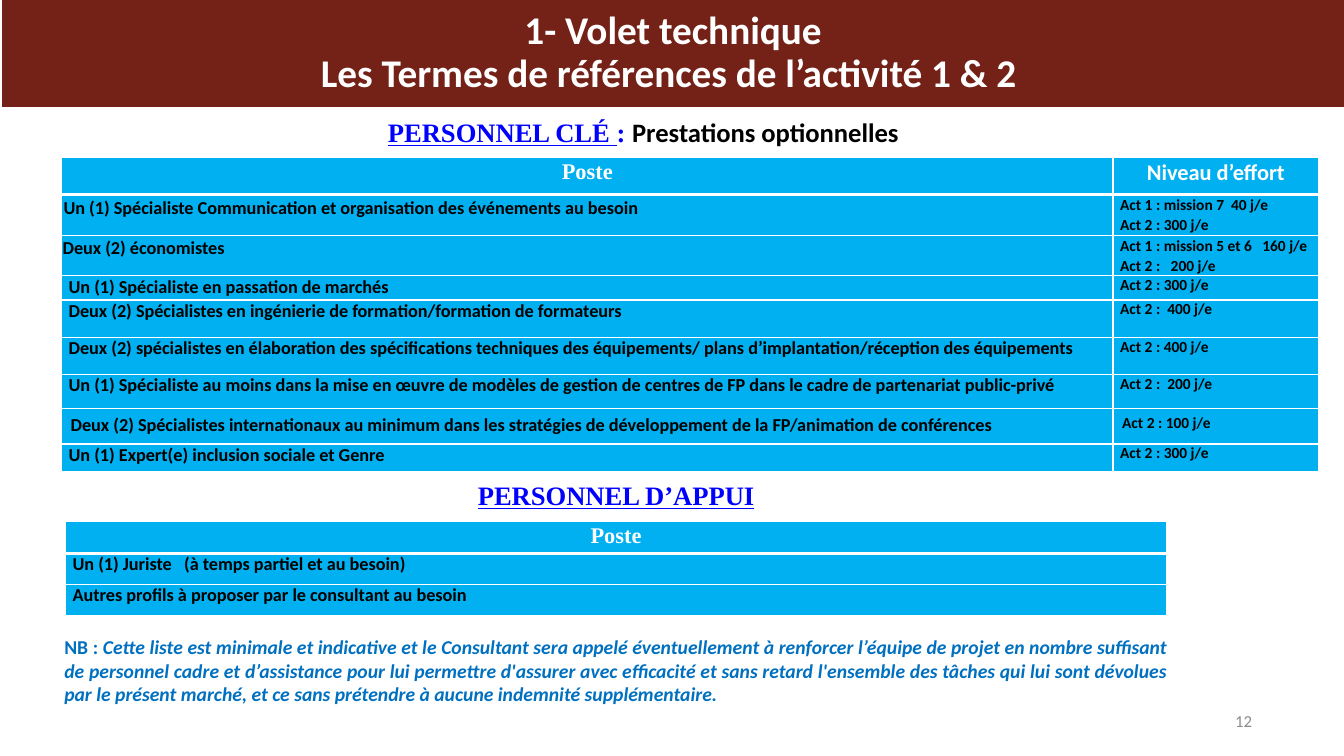
from lxml import etree
from pptx import Presentation
from pptx import util as u
from pptx.dml.color import RGBColor
from pptx.enum import text
from pptx.oxml import ns

rgb = RGBColor.from_string
SANS, SERIF = "Calibri", "Times New Roman"
SKY, WHITE, BLACK, BLUE = "00B0F0", "FFFFFF", "000000", "0000FF"
LEFT, CENTER = text.PP_ALIGN.LEFT, text.PP_ALIGN.CENTER
RIGHT, JUSTIFY = text.PP_ALIGN.RIGHT, text.PP_ALIGN.JUSTIFY

deck = Presentation()
deck.slide_width, deck.slide_height = u.Inches(13.33), u.Inches(7.5)
slide = deck.slides.add_slide(deck.slide_layouts[5])
# The slide is a grid of 100 columns by 100 rows
COL, ROW = deck.slide_width / 100, deck.slide_height / 100


def write(paragraph, runs, size, face, color, bold=True, align=LEFT, spacing=1.0):
    """Add the runs to the paragraph and give them one shared format."""
    paragraph.alignment, paragraph.line_spacing = align, spacing
    for words in runs:
        paragraph.add_run().text = words
    for font in (paragraph.font, *(run.font for run in paragraph.runs)):
        font.size, font.name, font.bold = u.Pt(size), face, bold
        font.color.rgb = rgb(color)


def add_staff_table(left, top, widths, rows):
    """Rows are (height, spacing, cells); cells are (lines, size, face, color, align, insets)."""
    height = sum(row[0] for row in rows)
    table = slide.shapes.add_table(
        len(rows), len(widths), int(left * COL), int(top * ROW),
        int(sum(widths) * COL), int(height * ROW)).table
    for column, width in zip(table.columns, widths):
        column.width = int(width * COL)
    for r, (height, spacing, cells) in enumerate(rows):
        table.rows[r].height = int(height * ROW)
        for c, (lines, size, face, color, align, (side, edge)) in enumerate(cells):
            cell = table.cell(r, c)
            cell.margin_left = cell.margin_right = u.Inches(side)
            cell.margin_top = cell.margin_bottom = u.Inches(edge)
            for i, line in enumerate(lines):
                frame = cell.text_frame
                paragraph = frame.add_paragraph() if i else frame.paragraphs[0]
                write(paragraph, [line], size, face, color, True, align, spacing)
            borders = cell._tc.get_or_add_tcPr()
            for edge_name in ("lnL", "lnR", "lnT", "lnB"):
                thick = (r, edge_name) in ((0, "lnB"), (1, "lnT"))
                line = etree.SubElement(borders, ns.qn("a:" + edge_name),
                                        w=str(u.Pt(3 if thick else 1)))
                paint = etree.SubElement(line, ns.qn("a:solidFill"))
                etree.SubElement(paint, ns.qn("a:srgbClr"), val=WHITE)
            cell.fill.solid()
            cell.fill.fore_color.rgb = rgb(SKY)


# Title banner
banner = slide.shapes.title
banner.left, banner.top = int(0.15 * COL), 0
banner.width, banner.height = int(99.85 * COL), int(14.13 * ROW)
banner.fill.solid()
banner.fill.fore_color.rgb = rgb("742217")
heading = banner.text_frame
heading.auto_size = text.MSO_AUTO_SIZE.NONE
heading.vertical_anchor = text.MSO_ANCHOR.MIDDLE
write(heading.paragraphs[0], ["1- Volet technique"], 28, SANS, WHITE, True, CENTER, 0.9)
write(heading.add_paragraph(), ["Les Termes de références de l’activité 1 & 2 "],
      28, SANS, WHITE, True, CENTER, 0.9)

# Key staff and support staff
tight, inset, roomy = (0.02, 0.01), (0.07, 0), (0.09, 0.05)
poste = (["Poste"], 16, SERIF, WHITE, CENTER, tight)
effort_title = (["Niveau d’effort"], 16, SANS, WHITE, CENTER, (0, 0))
key_staff = [
    (4.8, 1.07, tight, inset,
     "Un (1) Spécialiste Communication et organisation des événements au besoin",
     ["Act 1 : mission 7  40 j/e", "Act 2 : 300 j/e"]),
    (5.33, 1.07, (0.01, 0), inset, "Deux (2) économistes",
     ["Act 1 : mission 5 et 6   160 j/e", "Act 2 :   200 j/e"]),
    (3.2, 1, inset, inset, "Un (1) Spécialiste en passation de marchés", ["Act 2 : 300 j/e"]),
    (4.93, 1, inset, inset,
     "Deux (2) Spécialistes en ingénierie de formation/formation de formateurs",
     ["Act 2 :  400 j/e"]),
    (4.93, 1, inset, inset,
     "Deux (2) spécialistes en élaboration des spécifications techniques des équipements/ "
     "plans d’implantation/réception des équipements", ["Act 2 : 400 j/e"]),
    (4.53, 1, inset, inset,
     "Un (1) Spécialiste au moins dans la mise en œuvre de modèles de gestion de centres "
     "de FP dans le cadre de partenariat public-privé", ["Act 2 :  200 j/e"]),
    (4.67, 1, roomy, roomy,
     "Deux (2) Spécialistes internationaux au minimum dans les stratégies de développement "
     "de la FP/animation de conférences", ["Act 2 : 100 j/e"]),
    (3.6, 1, inset, inset, "Un (1) Expert(e) inclusion sociale et Genre", ["Act 2 : 300 j/e"]),
]
add_staff_table(4.58, 20.8, [78.24, 15.3], [(4.93, 1.07, [poste, effort_title])] + [
    (height, spacing, [([job], 13, SANS, BLACK, JUSTIFY, job_inset),
                       (efforts, 11, SANS, BLACK, LEFT, effort_inset)])
    for height, spacing, job_inset, effort_inset, job, efforts in key_staff])

support_staff = ["Un (1) Juriste   (à temps partiel et au besoin)",
                 "Autres profils à proposer par le consultant au besoin"]
add_staff_table(4.88, 68.93, [81.92], [(4.27, 1.07, [poste])] + [
    (4.13, 1, [([job], 13, SANS, BLACK, JUSTIFY, inset)]) for job in support_staff])

# Section headings, closing note and page number
notes = []
for left, top, width, height, wrap, runs, size, face, color, bold, align in [
    (27.46, 14.67, 40.81, 5.6, False,
     ["PERSONNEL CLÉ ", ": ", "Prestations optionnelles"], 19, SERIF, BLUE, True, CENTER),
    (34.66, 62.67, 22.36, 5.6, False, ["PERSONNEL D’APPUI"], 19, SERIF, BLUE, True, CENTER),
    (4.05, 83.33, 83.65, 10.8, True,
     ["NB : ", "Cette liste est minimale et indicative et le Consultant sera appelé "
      "éventuellement à renforcer l’équipe de projet en nombre suffisant de personnel cadre "
      "et d’assistance pour lui permettre d'assurer avec efficacité et sans retard "
      "l'ensemble des tâches qui lui sont dévolues par le présent marché, et ce sans "
      "prétendre à aucune indemnité supplémentaire."], 14, SANS, "0070C0", True, JUSTIFY),
    (70.67, 92.67, 22.5, 5.33, True, ["12"], 12, SANS, "8C8C8C", False, RIGHT),
]:
    frame = slide.shapes.add_textbox(int(left * COL), int(top * ROW),
                                     int(width * COL), int(height * ROW)).text_frame
    frame.word_wrap = wrap
    write(frame.paragraphs[0], runs, size, face, color, bold, align)
    notes.append(frame)

key_heading, support_heading, closing_note, page_number = notes
key_runs = key_heading.paragraphs[0].runs
key_runs[0].font.underline = True
key_runs[2].font.name = SANS
key_runs[2].font.color.rgb = rgb(BLACK)
support_heading.paragraphs[0].runs[0].font.underline = True
closing_note.paragraphs[0].runs[1].font.italic = True
page_number.margin_left = page_number.margin_right = 0
page_number.margin_top = page_number.margin_bottom = 0
page_number.vertical_anchor = text.MSO_ANCHOR.MIDDLE

deck.save("out.pptx")
